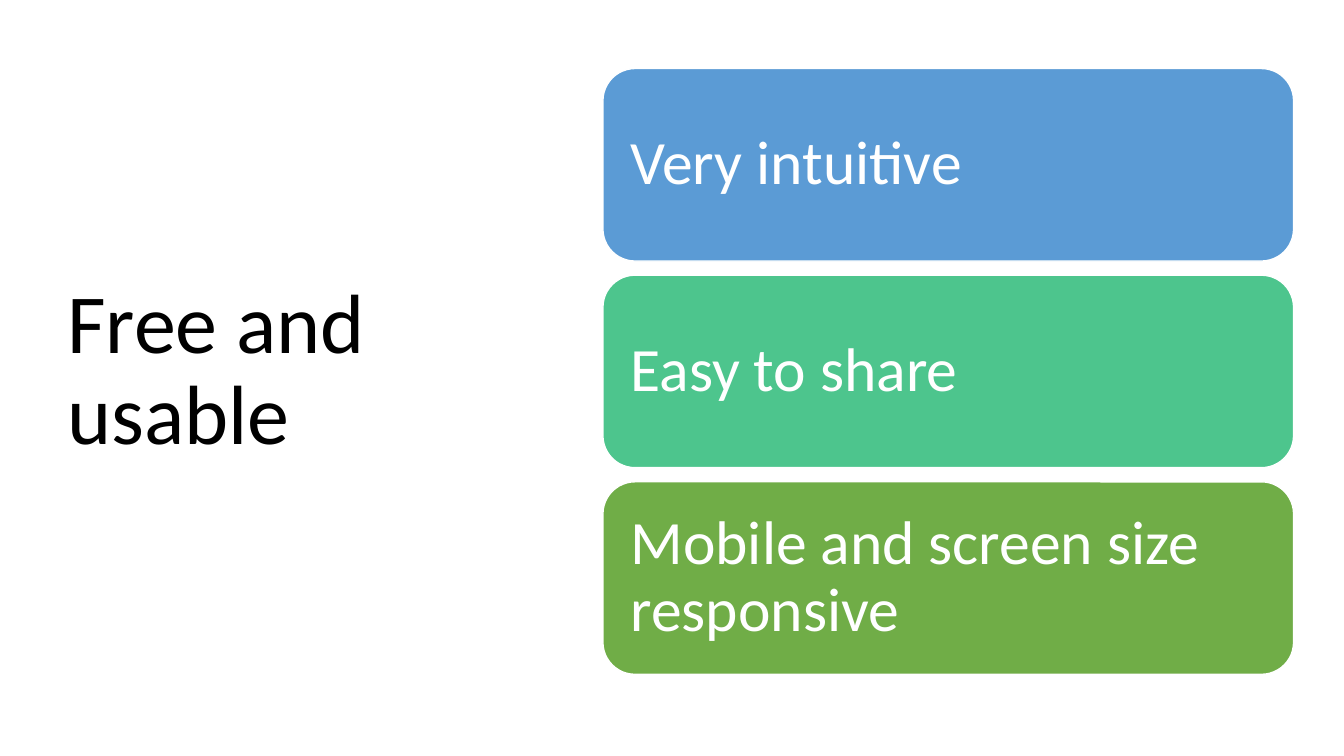
import pptx
import pptx.util
import pptx.dml.color
import pptx.enum.shapes
import pptx.enum.text
from pptx.util import Inches

COLORS = {
    "text": "000000",
    "white": "FFFFFF",
    "blue": "5B9BD5",
    "teal": "4DC58D",
    "green": "70AD47",
}
FONT = "Calibri"


def rgb(name):
    return pptx.dml.color.RGBColor.from_string(COLORS[name])


def set_text(tf, text, size, color):
    tf.word_wrap = True
    tf.vertical_anchor = pptx.enum.text.MSO_ANCHOR.MIDDLE
    tf.text = text
    p = tf.paragraphs[0]
    p.alignment = pptx.enum.text.PP_ALIGN.LEFT
    p.line_spacing = 0.9
    r = p.runs[0]
    r.font.name = FONT
    r.font.size = pptx.util.Pt(size)
    r.font.color.rgb = rgb(color)


prs = pptx.Presentation()
prs.slide_width = Inches(13.33)
prs.slide_height = Inches(7.5)
s = prs.slides.add_slide(prs.slide_layouts[6])

# Title
title = s.shapes.add_textbox(Inches(0.57), Inches(0.68), Inches(4.16), Inches(6.02))
set_text(title.text_frame, "Free and usable", 60, "text")

# Benefit cards, evenly stacked
cards = [
    ("Very intuitive", "blue"),
    ("Easy to share", "teal"),
    ("Mobile and screen size responsive", "green"),
]
top, pitch = 0.68, 2.05
for i, (text, color) in enumerate(cards):
    sp = s.shapes.add_shape(
        pptx.enum.shapes.MSO_SHAPE.ROUNDED_RECTANGLE,
        Inches(5.98), Inches(top + i * pitch), Inches(6.85), Inches(1.91))
    sp.shadow.inherit = False
    sp.fill.solid()
    sp.fill.fore_color.rgb = rgb(color)
    sp.line.color.rgb = rgb("white")
    sp.line.width = pptx.util.Pt(1)
    tf = sp.text_frame
    tf.margin_left = tf.margin_right = Inches(0.18)
    tf.margin_top = tf.margin_bottom = Inches(0.18)
    set_text(tf, text, 44, "white")

prs.save("out.pptx")
